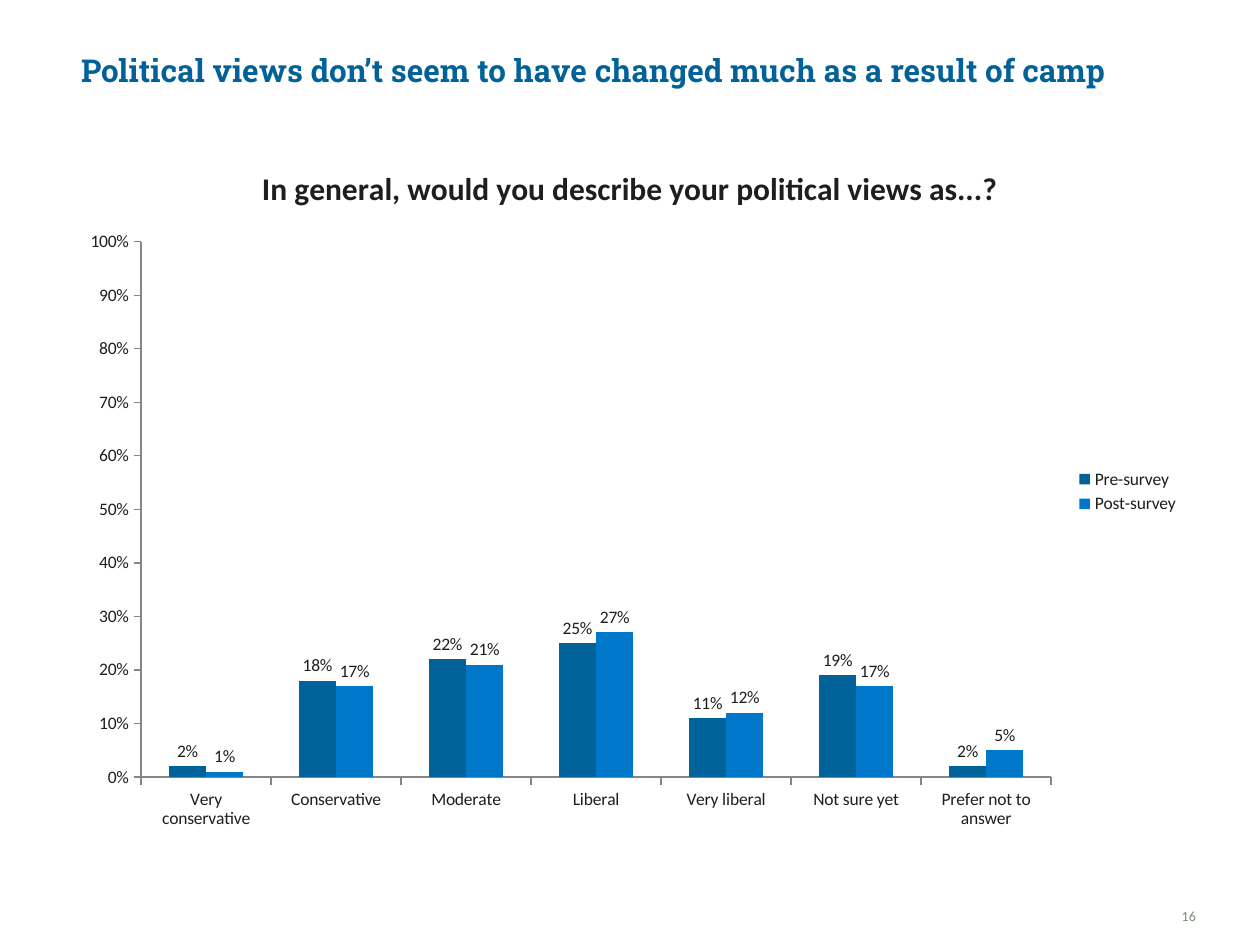
from dataclasses import dataclass

from pptx import Presentation
from pptx.chart.data import CategoryChartData
from pptx.dml.color import RGBColor
from pptx.enum.chart import XL_CHART_TYPE, XL_LABEL_POSITION, XL_LEGEND_POSITION, XL_TICK_MARK
from pptx.enum.text import MSO_ANCHOR, PP_ALIGN
from pptx.util import Emu, Pt

CLUSTERED = XL_CHART_TYPE.COLUMN_CLUSTERED
OUTSIDE_END = XL_LABEL_POSITION.OUTSIDE_END
LEGEND_RIGHT = XL_LEGEND_POSITION.RIGHT
TICK_OUT = XL_TICK_MARK.OUTSIDE
TICK_NONE = XL_TICK_MARK.NONE
TOP, BOTTOM = MSO_ANCHOR.TOP, MSO_ANCHOR.BOTTOM
LEFT, RIGHT = PP_ALIGN.LEFT, PP_ALIGN.RIGHT

NAVY = RGBColor(0x00, 0x62, 0x98)
BLUE = RGBColor(0x00, 0x77, 0xC8)
INK = RGBColor(0x1E, 0x1E, 0x1E)
AXIS_GRAY = RGBColor(0x86, 0x86, 0x86)
NUMBER_GRAY = RGBColor(0x7E, 0x8B, 0x7A)

PIXELS_PER_INCH = 126
PERCENT = "0%"


@dataclass(frozen=True)
class Box:
    left: int
    top: int
    width: int
    height: int

    def emu(self) -> list[Emu]:
        return [px(n) for n in (self.left, self.top, self.width, self.height)]


@dataclass(frozen=True)
class Label:
    text: str
    box: Box
    font: str
    size: int
    color: RGBColor
    bold: bool
    align: PP_ALIGN
    anchor: MSO_ANCHOR
    inset_x: int
    inset_y: int


@dataclass(frozen=True)
class Survey:
    name: str
    values: tuple[float, ...]
    color: RGBColor


LABELS = (
    Label("Political views don’t seem to have changed much as a result of camp",
          Box(68, 45, 1092, 88), "Roboto Slab", 18, NAVY, True, LEFT, TOP, 13, 6),
    Label("16", Box(1130, 891, 66, 33), "Calibri", 8, NUMBER_GRAY, False, RIGHT, BOTTOM, 0, 0),
)
CHART_BOX = Box(68, 140, 1124, 703)
CHART_TITLE = "In general, would you describe your political views as...?"
VIEWS = ("Very conservative", "Conservative", "Moderate", "Liberal",
         "Very liberal", "Not sure yet", "Prefer not to answer")
SURVEYS = (
    Survey("Pre-survey", (0.02, 0.18, 0.22, 0.25, 0.11, 0.19, 0.02), NAVY),
    Survey("Post-survey", (0.01, 0.17, 0.21, 0.27, 0.12, 0.17, 0.05), BLUE),
)


def px(pixels: int) -> Emu:
    return Emu(round(pixels * 914400 / PIXELS_PER_INCH))


def style_font(font, name: str, size: int, color: RGBColor, bold: bool) -> None:
    font.name = name
    font.size = Pt(size)
    font.bold = bold
    font.color.rgb = color


def add_label(slide, label: Label) -> None:
    frame = slide.shapes.add_textbox(*label.box.emu()).text_frame
    frame.word_wrap = True
    frame.vertical_anchor = label.anchor
    frame.margin_left = frame.margin_right = px(label.inset_x)
    frame.margin_top = frame.margin_bottom = px(label.inset_y)
    paragraph = frame.paragraphs[0]
    paragraph.text = label.text
    paragraph.alignment = label.align
    style_font(paragraph.font, label.font, label.size, label.color, label.bold)


def add_survey_chart(slide) -> None:
    data = CategoryChartData(number_format=PERCENT)
    data.categories = VIEWS
    for survey in SURVEYS:
        data.add_series(survey.name, survey.values)
    chart = slide.shapes.add_chart(CLUSTERED, *CHART_BOX.emu(), data).chart
    style_font(chart.font, "Calibri", 10, INK, False)

    chart.has_title = True
    title = chart.chart_title
    title.include_in_layout = False
    paragraph = title.text_frame.paragraphs[0]
    paragraph.text = CHART_TITLE
    style_font(paragraph.font, "Calibri", 18, INK, True)

    chart.has_legend = True
    chart.legend.position = LEGEND_RIGHT
    chart.legend.include_in_layout = False

    for axis in (chart.category_axis, chart.value_axis):
        axis.has_major_gridlines = False
        axis.major_tick_mark = TICK_OUT
        axis.minor_tick_mark = TICK_NONE
        axis.format.line.color.rgb = AXIS_GRAY
        axis.format.line.width = Pt(0.75)
    value_axis = chart.value_axis
    value_axis.minimum_scale = 0
    value_axis.maximum_scale = 1
    value_axis.major_unit = 0.1
    value_axis.tick_labels.number_format = PERCENT
    value_axis.tick_labels.number_format_is_linked = False

    plot = chart.plots[0]
    plot.gap_width = 150
    plot.overlap = 0
    plot.vary_by_categories = False
    for series, survey in zip(plot.series, SURVEYS):
        series.format.fill.solid()
        series.format.fill.fore_color.rgb = survey.color
        labels = series.data_labels
        labels.show_value = True
        labels.number_format = PERCENT
        labels.number_format_is_linked = False
        labels.position = OUTSIDE_END


def main() -> None:
    presentation = Presentation()
    presentation.slide_width = px(1260)
    presentation.slide_height = px(945)
    slide = presentation.slides.add_slide(presentation.slide_layouts[6])
    for label in LABELS:
        add_label(slide, label)
    add_survey_chart(slide)
    presentation.save("out.pptx")


if __name__ == "__main__":
    main()
